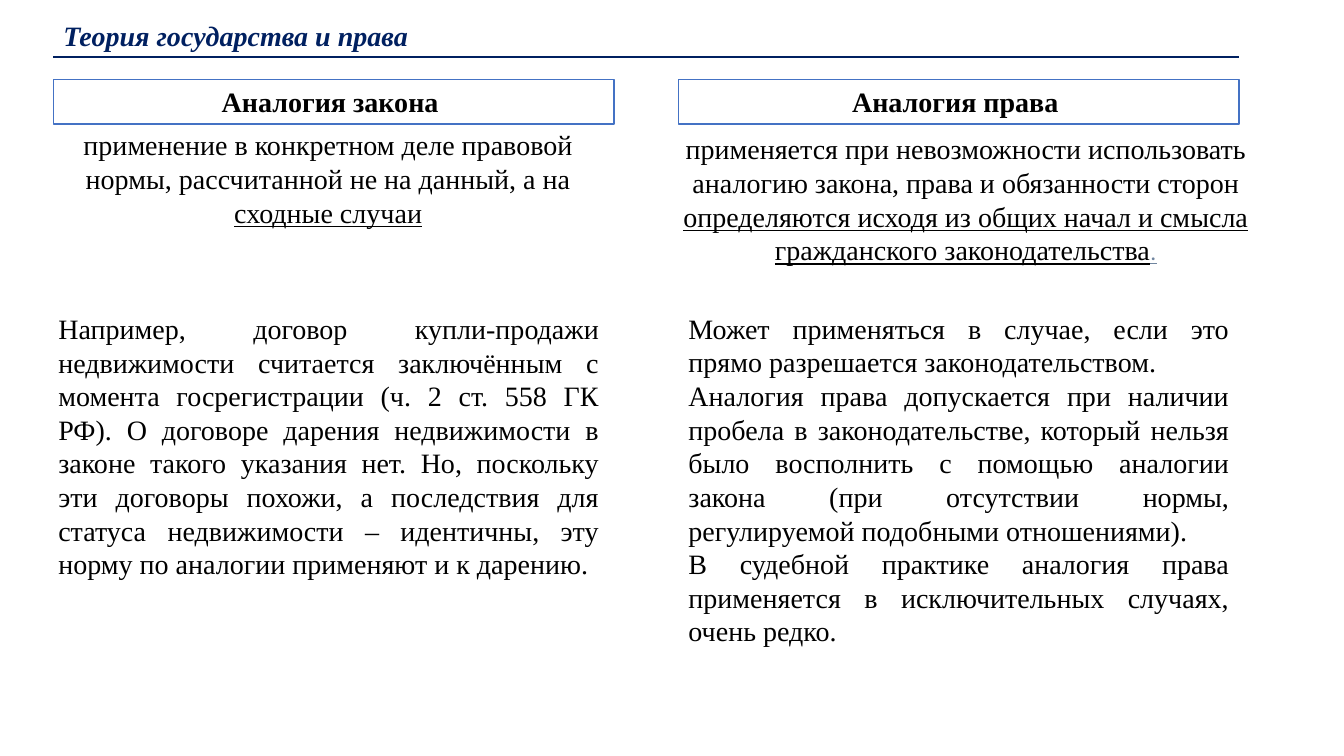
import pptx
import pptx.dml.color
import pptx.enum.shapes
import pptx.enum.text
import pptx.oxml.ns
import pptx.util
import lxml.etree

PX = 9144  # 100 px to the inch
ALIGN = pptx.enum.text.PP_ALIGN
THEME = {
    "navy": "002060", "blue": "4472C4", "white": "FFFFFF", "black": "000000", "grey": "70859F",
    "font": "Times New Roman", "stop_font": "Roboto", "size": 20, "stop_size": 18,
}
BODY = {"name": THEME["font"], "size": THEME["size"], "color": THEME["black"]}
BOLD = {**BODY, "bold": True}
UNDERLINED = {**BODY, "underline": True}
COURSE = {**BOLD, "italic": True, "color": THEME["navy"]}
FULL_STOP = {"name": THEME["stop_font"], "size": THEME["stop_size"],
             "color": THEME["grey"], "underline": True}


def rgb(value):
    return pptx.dml.color.RGBColor.from_string(value)


def write(holder, paragraphs, alignment, wrap=True):
    """Fill a shape with paragraphs, each a list of (text, format) runs."""
    frame = holder.text_frame
    frame.word_wrap = wrap
    frame.auto_size = pptx.enum.text.MSO_AUTO_SIZE.SHAPE_TO_FIT_TEXT
    frame.vertical_anchor = pptx.enum.text.MSO_ANCHOR.TOP
    for number, runs in enumerate(paragraphs):
        paragraph = frame.add_paragraph() if number else frame.paragraphs[0]
        paragraph.alignment = alignment
        for text, style in runs:
            run = paragraph.add_run()
            run.text = text
            for key, value in style.items():
                if key == "color":
                    run.font.color.rgb = rgb(value)
                else:
                    setattr(run.font, key, pptx.util.Pt(value) if key == "size" else value)


presentation = pptx.Presentation()
presentation.slide_width = 1333 * PX
presentation.slide_height = 750 * PX
shapes = presentation.slides.add_slide(presentation.slide_layouts[6]).shapes

course = shapes.add_textbox(*(n * PX for n in (53, 13, 371, 44)))
write(course, [[("Теория государства и права", COURSE)]], ALIGN.LEFT, wrap=False)

rule = shapes.add_connector(pptx.enum.shapes.MSO_CONNECTOR.STRAIGHT,
                            *(n * PX for n in (53, 57, 1229, 57)))
rule.line.color.rgb = rgb(THEME["navy"])
rule.line.width = pptx.util.Pt(1.5)
lxml.etree.SubElement(rule.element.spPr, pptx.oxml.ns.qn("a:effectLst"))

analogies = [
    {
        "heading": "Аналогия закона ",
        "heading_at": (53, 79, 556, 44),
        "definition": [
            ("применение в конкретном деле правовой нормы, рассчитанной не на данный, а на ", BODY),
            ("сходные случаи", UNDERLINED),
        ],
        "definition_at": (42, 122, 567, 111),
        "details": [
            "Например, договор купли-продажи недвижимости считается заключённым с момента "
            "госрегистрации (ч. 2 ст. 558 ГК РФ). О договоре дарения недвижимости в законе "
            "такого указания нет. Но, поскольку эти договоры похожи, а последствия для статуса "
            "недвижимости – идентичны, эту норму по аналогии применяют и к дарению.",
        ],
        "details_at": (48, 304, 556, 279),
    },
    {
        "heading": "Аналогия права ",
        "heading_at": (673, 79, 556, 44),
        "definition": [
            ("применяется при невозможности использовать аналогию закона, "
             "права и обязанности сторон ", BODY),
            ("определяются исходя из общих начал и смысла гражданского законодательства",
             UNDERLINED),
            (".", FULL_STOP),
        ],
        "definition_at": (625, 126, 666, 145),
        "details": [
            "Может применяться в случае, если это прямо разрешается законодательством.",
            "Аналогия права допускается при наличии пробела в законодательстве, который нельзя "
            "было восполнить с помощью аналогии закона (при отсутствии нормы, регулируемой "
            "подобными отношениями).",
            "В судебной практике аналогия права применяется в исключительных случаях, "
            "очень редко.",
        ],
        "details_at": (673, 304, 556, 347),
    },
]

for analogy in analogies:
    heading = shapes.add_shape(pptx.enum.shapes.MSO_SHAPE.RECTANGLE,
                               *(n * PX for n in analogy["heading_at"]))
    heading.shadow.inherit = False
    heading.fill.solid()
    heading.fill.fore_color.rgb = rgb(THEME["white"])
    heading.line.color.rgb = rgb(THEME["blue"])
    heading.line.width = pptx.util.Pt(1)
    write(heading, [[(analogy["heading"], BOLD)]], ALIGN.CENTER)

    definition = shapes.add_textbox(*(n * PX for n in analogy["definition_at"]))
    write(definition, [analogy["definition"]], ALIGN.CENTER)

    details = shapes.add_textbox(*(n * PX for n in analogy["details_at"]))
    write(details, [[(text, BODY)] for text in analogy["details"]], ALIGN.JUSTIFY)

presentation.save("out.pptx")
